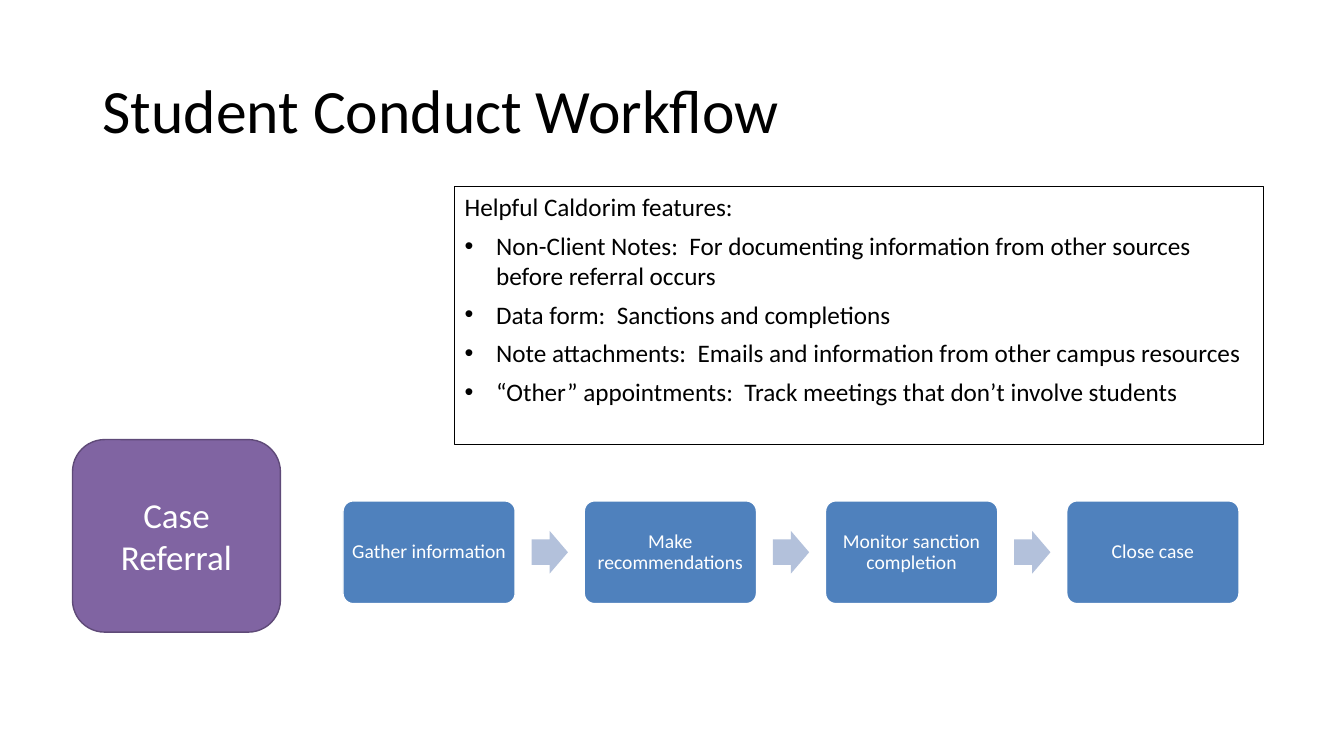
from lxml import etree
from pptx import Presentation
from pptx.dml.color import RGBColor
from pptx.enum.shapes import MSO_SHAPE
from pptx.enum.text import MSO_ANCHOR, MSO_AUTO_SIZE, PP_ALIGN
from pptx.oxml.ns import qn
from pptx.util import Pt

ROUNDED, ARROW = MSO_SHAPE.ROUNDED_RECTANGLE, MSO_SHAPE.RIGHT_ARROW
TOP, MIDDLE = MSO_ANCHOR.TOP, MSO_ANCHOR.MIDDLE
LEFT, CENTER = PP_ALIGN.LEFT, PP_ALIGN.CENTER
NO_FIT = MSO_AUTO_SIZE.NONE

BLACK = RGBColor(0x00, 0x00, 0x00)
WHITE = RGBColor(0xFF, 0xFF, 0xFF)
BLUE = RGBColor(0x4F, 0x81, 0xBD)
PALE_BLUE = RGBColor(0xB3, 0xC1, 0xDB)
PURPLE = RGBColor(0x80, 0x64, 0xA2)
DARK_PURPLE = RGBColor(0x5F, 0x4A, 0x78)

FONT = "Calibri"
HEADING = "Helpful Caldorim features:"
FEATURES = [
    "Non-Client Notes:  For documenting information from other sources before referral occurs",
    "Data form:  Sanctions and completions",
    "Note attachments:  Emails and information from other campus resources",
    "“Other” appointments:  Track meetings that don’t involve students",
]
STEPS = ["Gather information", "Make recommendations",
         "Monitor sanction completion", "Close case"]


def set_all(target, values):
    for name, value in values.items():
        setattr(target, name, value)


def place(shape, box):
    names = ("left", "top", "width", "height")
    set_all(shape, dict(zip(names, map(Pt, box))))


def write(frame, lines, size, color, anchor=MIDDLE, inset=7.2, **para_format):
    set_all(frame, {"word_wrap": True, "auto_size": NO_FIT, "vertical_anchor": anchor,
                    "margin_left": Pt(inset), "margin_right": Pt(inset)})
    for index, line in enumerate(lines):
        para = frame.add_paragraph() if index else frame.paragraphs[0]
        set_all(para, {"space_before": Pt(0), **para_format})
        span = para.add_run()
        span.text = line
        set_all(span.font, {"name": FONT, "size": Pt(size)})
        span.font.color.rgb = color


def add_block(page, kind, box, fill, line=None, adjustments=()):
    block = page.shapes.add_shape(kind, *map(Pt, box))
    block.shadow.inherit = False
    block.fill.solid()
    block.fill.fore_color.rgb = fill
    if line is None:
        block.line.fill.background()
    else:
        block.line.color.rgb = line
        block.line.width = Pt(1)
    for index, value in enumerate(adjustments):
        block.adjustments[index] = value
    return block


def add_title(page, box):
    title = page.shapes.title
    place(title, box)
    write(title.text_frame, ["Student Conduct Workflow"], 44, BLACK,
          alignment=LEFT, line_spacing=0.9)


def add_features(page, box):
    body = page.placeholders[1]
    place(body, box)
    body.line.color.rgb = BLACK
    body.line.width = Pt(0.75)
    write(body.text_frame, [HEADING, *FEATURES], 18, BLACK, anchor=TOP, alignment=LEFT)
    # Plain heading, then hanging bullets
    for index, para in enumerate(body.text_frame.paragraphs):
        indent = Pt(22.5) if index else 0
        props = para._p.get_or_add_pPr()
        props.set("marL", str(indent))
        props.set("indent", str(-indent))
        if index:
            para.space_before = Pt(6)
        else:
            etree.SubElement(props, qn("a:buNone"))


def add_referral(page, box):
    block = add_block(page, ROUNDED, box, PURPLE, DARK_PURPLE)
    write(block.text_frame, ["Case Referral"], 25, WHITE, alignment=CENTER)


def add_steps(page, box):
    left, top, width, height = box
    step_width, arrow_width, arrow_height = 123, 26, 30.4
    pitch = (width - step_width) / (len(STEPS) - 1)
    arrow_offset = (step_width + pitch - arrow_width) / 2
    for index, label in enumerate(STEPS):
        x = left + index * pitch
        step = add_block(page, ROUNDED, (x, top, step_width, height), BLUE, WHITE, [0.1])
        write(step.text_frame, [label], 14, WHITE, inset=4,
              alignment=CENTER, line_spacing=0.9)
        # Arrow centred in the gap to the next step
        if index < len(STEPS) - 1:
            arrow_box = (x + arrow_offset, top + (height - arrow_height) / 2,
                         arrow_width, arrow_height)
            add_block(page, ARROW, arrow_box, PALE_BLUE, adjustments=[0.6, 0.5])


def main():
    deck = Presentation()
    set_all(deck, {"slide_width": Pt(960), "slide_height": Pt(540)})
    page = deck.slides.add_slide(deck.slide_layouts[1])
    add_title(page, (66, 28.8, 828, 104.4))
    add_steps(page, (245, 357.8, 640, 73.4))
    add_referral(page, (51.8, 314, 148.5, 137.5))
    add_features(page, (324.7, 133.2, 577.6, 184.3))
    deck.save("out.pptx")


if __name__ == "__main__":
    main()
